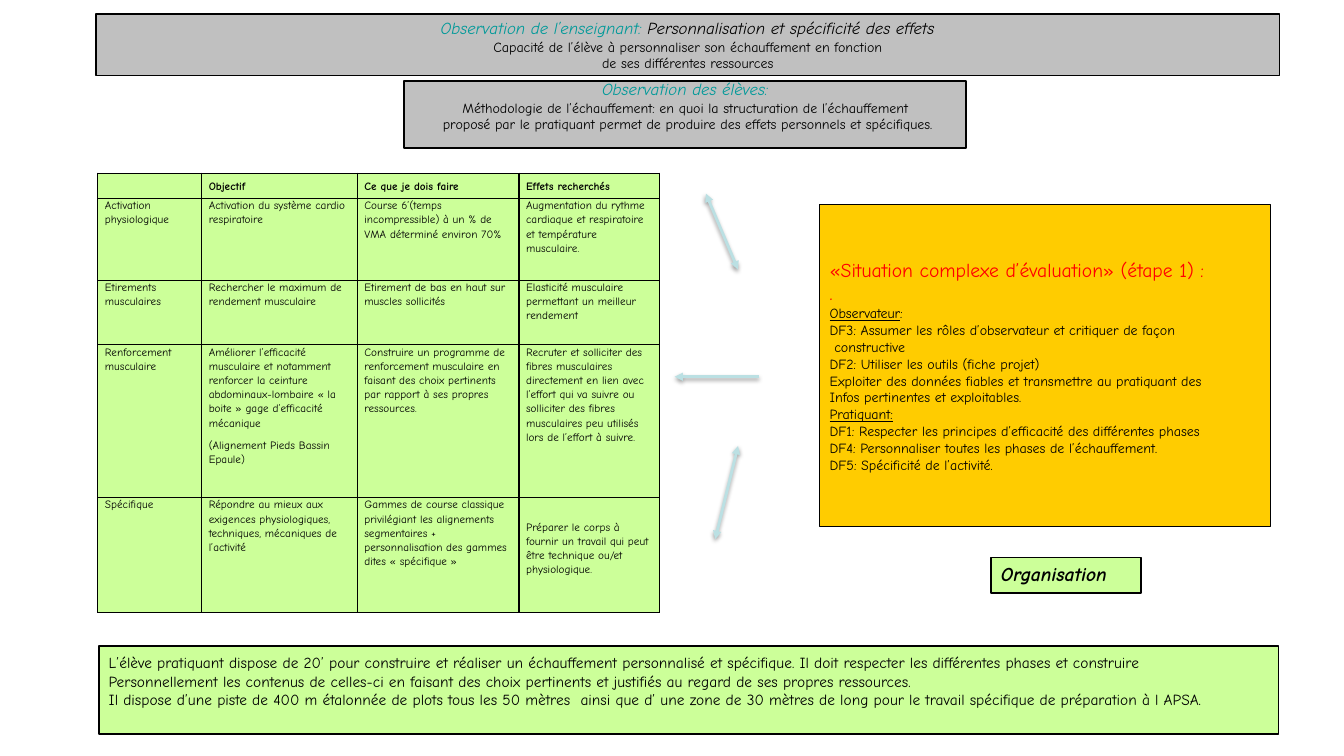
from lxml import etree
from pptx import Presentation
from pptx.dml.color import RGBColor
from pptx.enum.shapes import MSO_CONNECTOR, MSO_SHAPE
from pptx.enum.text import MSO_ANCHOR as ANCHOR, PP_ALIGN as ALIGN
from pptx.oxml.ns import qn
from pptx.util import Inches, Pt

WIDTH, HEIGHT = Inches(13.33), Inches(7.5)
COL, ROW = WIDTH / 100, HEIGHT / 100
FONT = "Comic Neue"
C = {"grey": "C0C0C0", "green": "CCFF99", "gold": "FFCC00", "teal": "009999",
     "red": "FF0000", "black": "000000", "arrow": "BBE0E3"}

BOXES = {
    "enseignant": (7.13, 1.87, 88.07, 8.13),
    "eleves": (30.08, 10.67, 41.79, 8.93),
    "phases": (7.28, 22.93, 41.79, 58.13),
    "fleches": (50.19, 25.6, 6.3, 45.73),
    "situation": (60.99, 27.07, 33.53, 42.53),
    "organisation": (73.74, 73.73, 11.18, 4.67),
    "consigne": (7.35, 85.47, 87.77, 11.6),
}

ENSEIGNANT = [
    [("Observation de l’enseignant: ", {"size": 12, "color": "teal", "italic": True}),
     ("Personnalisation et spécificité des effets", {"size": 12, "italic": True})],
    [("Capacité de l’élève à personnaliser son échauffement en fonction", {})],
    [(" de ses différentes ressources ", {})],
]
ELEVES = [
    [("Observation des élèves:", {"size": 12, "color": "teal", "italic": True})],
    [("Méthodologie de l’échauffement: en quoi la structuration de l’échauffement", {})],
    [(" proposé par le pratiquant permet de produire des effets personnels et spécifiques.", {})],
]
SITUATION = [
    [("«Situation complexe d’évaluation» (étape 1) :", {"size": 14, "color": "red"})],
    [(".", {"size": 14, "color": "red"})],
    [("Observateur", {"underline": True}), (":", {})],
    [("DF3: Assumer les rôles d’observateur et critiquer de façon", {})],
    [(" constructive", {})],
    [("DF2: Utiliser les outils (fiche projet)", {})],
    [("Exploiter des données fiables et transmettre au pratiquant des", {})],
    [("Infos pertinentes et exploitables.", {})],
    [("Pratiquant:", {"underline": True})],
    [("DF1: Respecter les principes d’efficacité des différentes phases", {})],
    [("DF4: Personnaliser toutes les phases de l’échauffement.", {})],
    [("DF5: Spécificité de l’activité.", {})],
]
ORGANISATION = [[("Organisation", {"size": 14, "bold": True, "italic": True})]]
CONSIGNE = [[(line, {"size": 11})] for line in (
    "L’élève pratiquant dispose de 20’ pour construire et réaliser un échauffement personnalisé et spécifique. Il doit respecter les différentes phases et construire",
    "Personnellement les contenus de celles-ci en faisant des choix pertinents et justifiés au regard de ses propres ressources.",
    "Il dispose d’une piste de 400 m étalonnée de plots tous les 50 mètres  ainsi que d’ une zone de 30 mètres de long pour le travail spécifique de préparation à l APSA.",
)]

COL_SHARES = (0.185, 0.277, 0.288, 0.25)
ROW_SHARES = (0.057, 0.186, 0.147, 0.348, 0.262)
PHASES = [
    ["", "Objectif", "Ce que je dois faire", "Effets recherchés"],
    ["Activation physiologique", "Activation du système cardio respiratoire",
     "Course 6’(temps incompressible) à un % de VMA déterminé environ 70%",
     "Augmentation du rythme cardiaque et respiratoire et température musculaire."],
    ["Etirements musculaires", "Rechercher le maximum de rendement musculaire",
     "Etirement de bas en haut sur muscles sollicités",
     "Elasticité musculaire permettant un meilleur rendement"],
    ["Renforcement musculaire",
     "Améliorer l’efficacité musculaire et notamment renforcer la ceinture abdominaux-lombaire « la boite » gage d’efficacité mécanique\n(Alignement Pieds Bassin Epaule)",
     "Construire un programme de renforcement musculaire en faisant des choix pertinents par rapport à ses propres ressources.",
     "Recruter et solliciter des fibres musculaires directement en lien avec l’effort qui va suivre ou solliciter des fibres musculaires peu utilisés lors de l’effort à suivre."],
    ["Spécifique",
     "Répondre au mieux aux exigences physiologiques, techniques, mécaniques de l’activité",
     "Gammes de course classique privilégiant les alignements segmentaires + personnalisation des gammes dites « spécifique »",
     "Préparer le corps à fournir un travail qui peut être technique ou/et physiologique."],
]
ARROWS = [
    ((0.37, 0), (0.75, 0.22), True),
    ((1, 0.53), (0, 0.53), False),
    ((0.75, 0.73), (0.48, 1), True),
]


def place(name):
    x, y, w, h = BOXES[name]
    return round(x * COL), round(y * ROW), round(w * COL), round(h * ROW)


def rgb(name):
    return RGBColor.from_string(C[name])


def add_run(p, text, size=10, color="black", bold=False, italic=False, underline=False):
    r = p.add_run()
    r.text = text
    f = r.font
    f.name, f.size, f.color.rgb = FONT, Pt(size), rgb(color)
    f.bold, f.italic, f.underline = bold, italic, underline


def add_panel(s, box, fill, lines, line=1.25, align=ALIGN.LEFT,
              anchor=ANCHOR.MIDDLE, wrap=False, bottom=0.05):
    sp = s.shapes.add_shape(MSO_SHAPE.RECTANGLE, *box)
    sp.shadow.inherit = False
    sp.fill.solid()
    sp.fill.fore_color.rgb = rgb(fill)
    sp.line.color.rgb, sp.line.width = rgb("black"), Pt(line)
    tf = sp.text_frame
    tf.word_wrap, tf.vertical_anchor, tf.margin_bottom = wrap, anchor, Inches(bottom)
    for i, runs in enumerate(lines):
        p = tf.add_paragraph() if i else tf.paragraphs[0]
        p.alignment = align
        for text, style in runs:
            add_run(p, text, **style)


def add_borders(cell):
    tcPr = cell._tc.get_or_add_tcPr()
    for side in ("a:lnL", "a:lnR", "a:lnT", "a:lnB"):
        ln = etree.SubElement(tcPr, qn(side), w=str(Pt(1)))
        fill = etree.SubElement(ln, qn("a:solidFill"))
        etree.SubElement(fill, qn("a:srgbClr"), val=C["black"])


def fill_cell(cell, text, header):
    add_borders(cell)
    cell.fill.solid()
    cell.fill.fore_color.rgb = rgb("green")
    cell.margin_left = cell.margin_right = Inches(0.07)
    cell.margin_top = cell.margin_bottom = 0
    cell.vertical_anchor = ANCHOR.MIDDLE if header else ANCHOR.TOP
    tf = cell.text_frame
    for i, line in enumerate(text.split("\n")):
        p = tf.add_paragraph() if i else tf.paragraphs[0]
        p.line_spacing, p.space_after = 1.1, Pt(6)
        if line:
            add_run(p, line, size=8, bold=header)
        else:
            etree.SubElement(p._p, qn("a:endParaRPr"), sz="800")


def add_phases(s, box):
    x, y, w, h = box
    table = s.shapes.add_table(len(PHASES), len(PHASES[0]), x, y, w, h).table
    table.first_row = table.horz_banding = False
    for column, share in zip(table.columns, COL_SHARES):
        column.width = round(w * share)
    for row, share in zip(table.rows, ROW_SHARES):
        row.height = round(h * share)
    for i, texts in enumerate(PHASES):
        for j, text in enumerate(texts):
            fill_cell(table.cell(i, j), text, i == 0)
    table.cell(len(PHASES) - 1, len(PHASES[0]) - 1).margin_top = Inches(0.22)


def add_shadow(connector):
    effects = etree.SubElement(connector._element.spPr, qn("a:effectLst"))
    shadow = etree.SubElement(effects, qn("a:outerShdw"), blurRad=str(Pt(3.1)),
                              dist=str(Pt(1.6)), dir="5400000", rotWithShape="0")
    color = etree.SubElement(shadow, qn("a:srgbClr"), val=C["black"])
    etree.SubElement(color, qn("a:alpha"), val="38000")


def add_arrows(s, box):
    x, y, w, h = box
    for start, end, both in ARROWS:
        points = [round(v) for px, py in (start, end) for v in (x + px * w, y + py * h)]
        arrow = s.shapes.add_connector(MSO_CONNECTOR.STRAIGHT, *points)
        arrow.line.color.rgb, arrow.line.width = rgb("arrow"), Pt(2)
        ln = arrow.line._get_or_add_ln()
        for tag in ("a:headEnd", "a:tailEnd") if both else ("a:tailEnd",):
            etree.SubElement(ln, qn(tag), type="triangle")
        add_shadow(arrow)


def main():
    prs = Presentation()
    prs.slide_width, prs.slide_height = WIDTH, HEIGHT
    s = prs.slides.add_slide(prs.slide_layouts[6])
    add_panel(s, place("enseignant"), "grey", ENSEIGNANT, align=ALIGN.CENTER)
    add_panel(s, place("consigne"), "green", CONSIGNE, bottom=0.23)
    add_panel(s, place("situation"), "gold", SITUATION, line=0.75)
    add_panel(s, place("eleves"), "grey", ELEVES, align=ALIGN.CENTER, bottom=0.22)
    add_panel(s, place("organisation"), "green", ORGANISATION, anchor=ANCHOR.TOP, wrap=True)
    add_phases(s, place("phases"))
    add_arrows(s, place("fleches"))
    prs.save("out.pptx")


if __name__ == "__main__":
    main()
